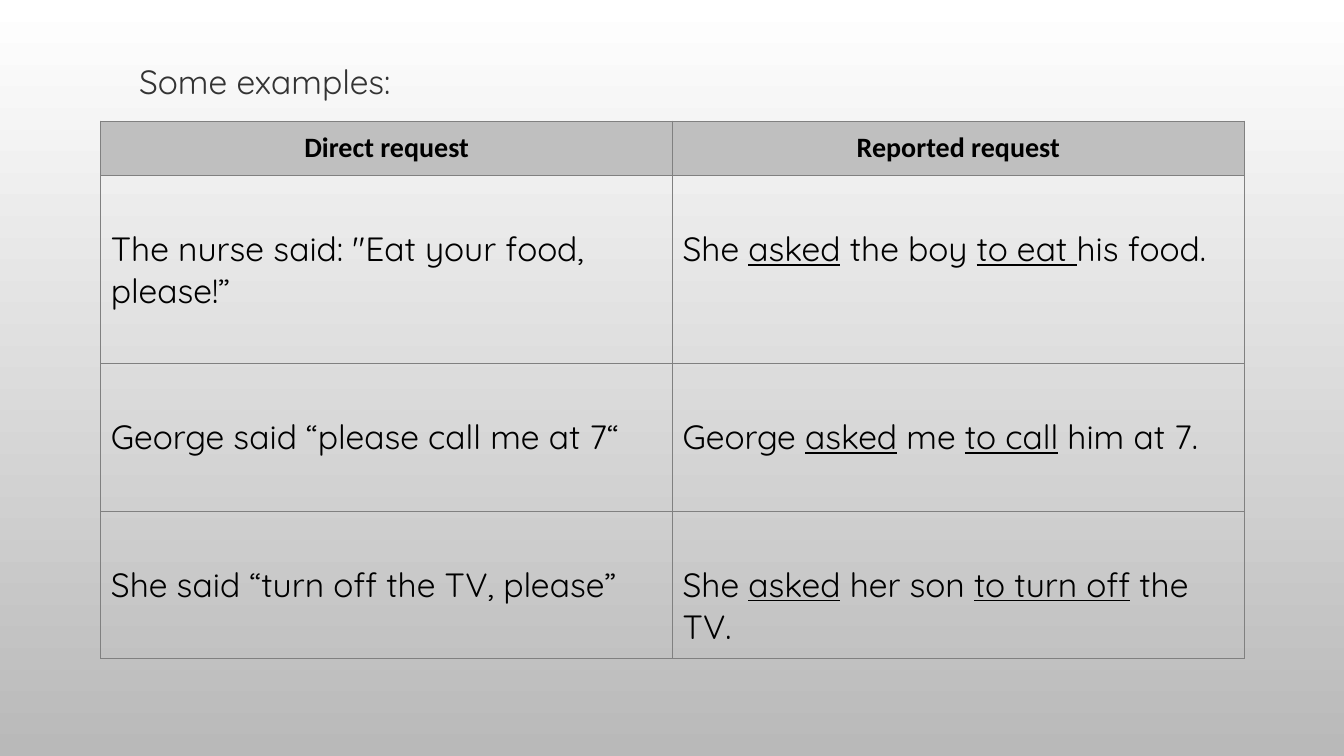
from lxml import etree
from pptx import Presentation
from pptx.dml.color import RGBColor
from pptx.enum.text import MSO_ANCHOR, MSO_AUTO_SIZE, PP_ALIGN
from pptx.oxml.ns import qn
from pptx.util import Inches, Pt

LEFT, CENTER = PP_ALIGN.LEFT, PP_ALIGN.CENTER
MIDDLE = MSO_ANCHOR.MIDDLE
NO_AUTOFIT = MSO_AUTO_SIZE.NONE
TITLE_ONLY = 5

COLORS = {
    "top": "FFFFFF",
    "bottom": "B9B9B9",
    "header": "BFBFBF",
    "border": "808080",
    "text": "000000",
    "title": "333333",
}
BODY_FONT = "Quicksand"
HEADER_FONT = "Calibri"
CELL_MARGIN = 0.1
BODY_TOP_MARGIN = 0.52
ROW_HEIGHTS = [0.54, 1.87, 1.46, 1.46]
COLUMN_WIDTH = 5.67

HEADERS = ["Direct request", "Reported request"]
UNDERLINE_MARK = "_"
EXAMPLES = [
    ["The nurse said: \"Eat your food, please!”",
     "She _asked_ the boy _to eat _his food."],
    ["George said “please call me at 7“",
     "George _asked_ me _to call_ him at 7."],
    ["She said “turn off the TV, please”",
     "She _asked_ her son _to turn off_ the TV."],
]


def rgb(name):
    return RGBColor.from_string(COLORS[name])


def format_run(run, font_name, size, color, bold=False):
    run.font.name = font_name
    run.font.size = Pt(size)
    run.font.color.rgb = rgb(color)
    run.font.bold = bold


def set_background(slide):
    fill = slide.background.fill
    fill.gradient()
    fill.gradient_angle = 270
    for stop, name in zip(fill.gradient_stops, ["top", "bottom"]):
        stop.color.rgb = rgb(name)


def set_title(slide, text):
    title = slide.shapes.title
    title.left, title.top = Inches(1.28), Inches(0.55)
    title.width, title.height = Inches(2.97), Inches(0.5)
    frame = title.text_frame
    frame.text = text
    frame.word_wrap = True
    frame.auto_size = NO_AUTOFIT
    frame.vertical_anchor = MIDDLE
    paragraph = frame.paragraphs[0]
    paragraph.alignment = LEFT
    format_run(paragraph.runs[0], BODY_FONT, 24, "title")


def set_borders(cell):
    properties = cell._tc.get_or_add_tcPr()
    for side in ["a:lnL", "a:lnR", "a:lnT", "a:lnB"]:
        line = etree.SubElement(properties, qn(side), w=str(Pt(0.75)))
        fill = etree.SubElement(line, qn("a:solidFill"))
        etree.SubElement(fill, qn("a:srgbClr"), val=COLORS["border"])


def set_margins(cell, top):
    cell.margin_left = cell.margin_right = Inches(CELL_MARGIN)
    cell.margin_bottom = Inches(CELL_MARGIN)
    cell.margin_top = Inches(top)


def fill_header(cell, text):
    set_margins(cell, CELL_MARGIN)
    set_borders(cell)
    cell.fill.solid()
    cell.fill.fore_color.rgb = rgb("header")
    cell.text_frame.text = text
    paragraph = cell.text_frame.paragraphs[0]
    paragraph.alignment = CENTER
    format_run(paragraph.runs[0], HEADER_FONT, 20, "text", bold=True)


def fill_example(cell, text):
    set_margins(cell, BODY_TOP_MARGIN)
    set_borders(cell)
    cell.fill.background()
    paragraph = cell.text_frame.paragraphs[0]
    for index, part in enumerate(text.split(UNDERLINE_MARK)):
        run = paragraph.add_run()
        run.text = part
        format_run(run, BODY_FONT, 24, "text")
        run.font.underline = index % 2 == 1


def add_examples_table(slide):
    frame = slide.shapes.add_table(
        len(ROW_HEIGHTS), len(HEADERS), Inches(1), Inches(1.2),
        Inches(COLUMN_WIDTH * len(HEADERS)), Inches(sum(ROW_HEIGHTS)))
    table = frame.table
    table.first_row = False
    table.horz_banding = False
    for column in table.columns:
        column.width = Inches(COLUMN_WIDTH)
    for row, height in zip(table.rows, ROW_HEIGHTS):
        row.height = Inches(height)
    for column_index, header in enumerate(HEADERS):
        fill_header(table.cell(0, column_index), header)
    for row_index, example in enumerate(EXAMPLES, start=1):
        for column_index, text in enumerate(example):
            fill_example(table.cell(row_index, column_index), text)


def main():
    presentation = Presentation()
    presentation.slide_width = Inches(13.33)
    presentation.slide_height = Inches(7.5)
    slide = presentation.slides.add_slide(presentation.slide_layouts[TITLE_ONLY])
    set_background(slide)
    set_title(slide, "Some examples:")
    add_examples_table(slide)
    presentation.save("out.pptx")


if __name__ == "__main__":
    main()
